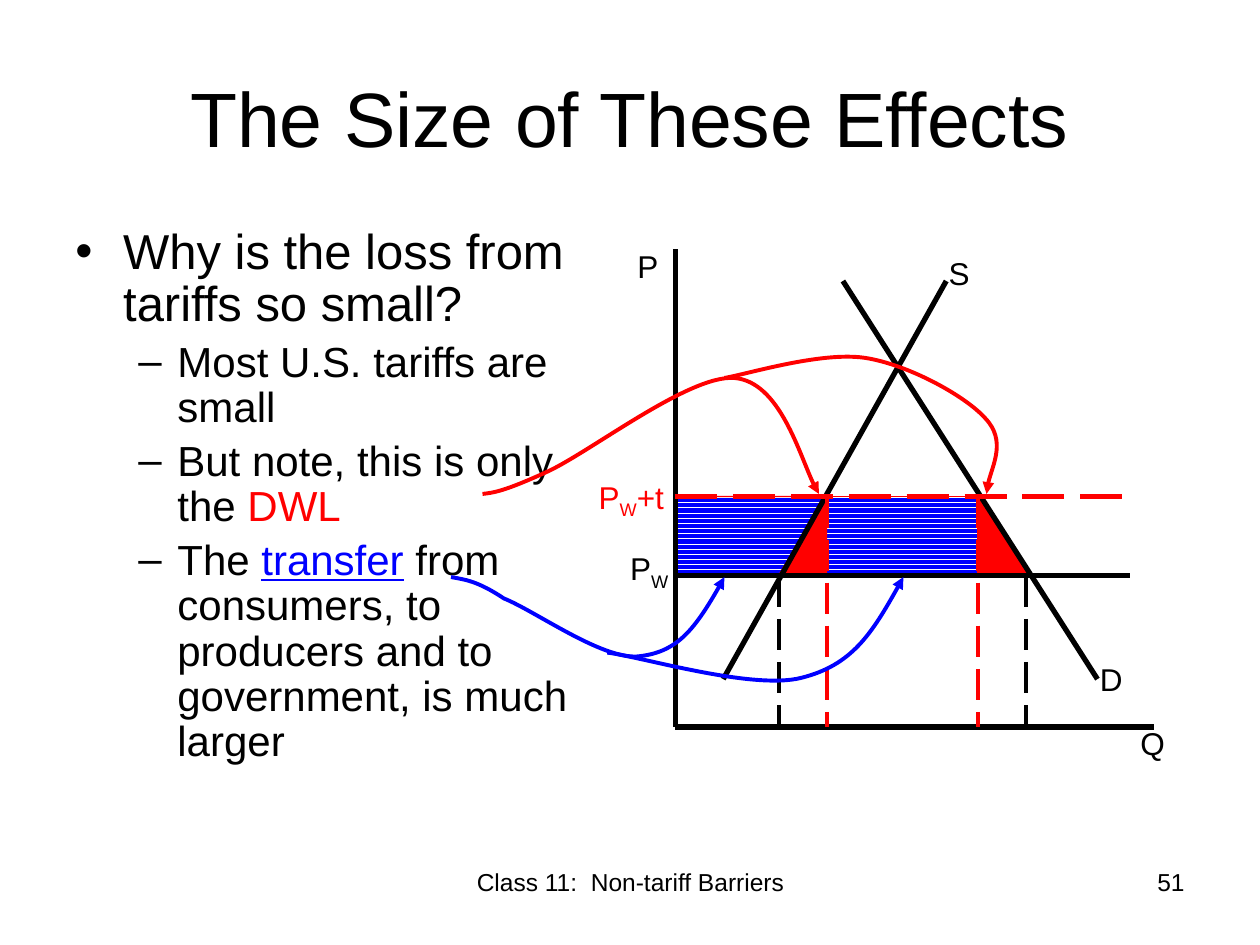
from pptx import Presentation
from pptx.dml.color import RGBColor
from pptx.enum.dml import MSO_LINE, MSO_PATTERN
from pptx.enum.shapes import MSO_CONNECTOR
from pptx.enum.text import MSO_ANCHOR, PP_ALIGN
from pptx.oxml.ns import qn
from pptx.util import Inches, Pt
from lxml.etree import SubElement

COLORS = {"black": "000000", "red": "FF0000", "blue": "0000FF", "white": "FFFFFF"}
FONT = "Arial"


def color(name):
    """Return the named colour."""
    return RGBColor.from_string(COLORS[name])


class Page:
    """Holds the style and the current slide."""

    def __init__(self, deck):
        self.slide = deck.slides.add_slide(deck.slide_layouts[5])
        self.shapes = self.slide.shapes

    def span(self, para, text, size, ink="black", underline=None, subscript=False):
        """Add one run to a paragraph."""
        span = para.add_run()
        span.text = text
        span.font.name = FONT
        span.font.size = Pt(size)
        span.font.color.rgb = color(ink)
        span.font.underline = underline
        if subscript:
            span._r.get_or_add_rPr().set("baseline", "-25000")

    def title(self, text, left, top, width, height):
        """Place and fill the title placeholder."""
        box = self.shapes.title
        box.left, box.top = Inches(left), Inches(top)
        box.width, box.height = Inches(width), Inches(height)
        box.text_frame.vertical_anchor = MSO_ANCHOR.MIDDLE
        para = box.text_frame.paragraphs[0]
        para.alignment = PP_ALIGN.CENTER
        self.span(para, text, 44)

    def frame(self, left, top, width, height):
        """Add a wrapping text box and return its frame."""
        box = self.shapes.add_textbox(
            Inches(left), Inches(top), Inches(width), Inches(height))
        box.text_frame.word_wrap = True
        return box.text_frame

    def footer(self, text, left, width, alignment):
        """Add a text at the foot of the slide."""
        para = self.frame(left, 6.83, width, 0.52).paragraphs[0]
        para.alignment = alignment
        self.span(para, text, 14)

    def label(self, left, top, width, *parts):
        """Add a diagram label made of (text, style) parts."""
        frame = self.frame(left, top, width, 0.36)
        frame.margin_left = frame.margin_right = Inches(0.08)
        frame.margin_top = frame.margin_bottom = Inches(0.04)
        for text, style in parts:
            self.span(frame.paragraphs[0], text, 18, **style)

    def bullets(self, items, left, top, width, height):
        """Add a two-level bullet list."""
        levels = [(28, "•", 0.38, -0.38), (24, "–", 0.81, -0.31)]
        frame = self.frame(left, top, width, height)
        for number, (level, parts) in enumerate(items):
            para = frame.add_paragraph() if number else frame.paragraphs[0]
            size, mark, margin, indent = levels[level]
            para.level = level
            para.line_spacing = 0.9
            para.space_before = Pt(size * 0.2)
            properties = para._p.get_or_add_pPr()
            properties.set("marL", str(Inches(margin)))
            properties.set("indent", str(Inches(indent)))
            SubElement(properties, qn("a:buFont")).set("typeface", FONT)
            SubElement(properties, qn("a:buChar")).set("char", mark)
            for text, style in parts:
                self.span(para, text, size, **style)

    def line(self, start, end, ink="black", width=3, dashed=False):
        """Add a straight line."""
        line = self.shapes.add_connector(
            MSO_CONNECTOR.STRAIGHT, *(Inches(value) for value in start + end))
        line.line.color.rgb = color(ink)
        line.line.width = Pt(width)
        if dashed:
            line.line.dash_style = MSO_LINE.LONG_DASH
        SubElement(line._element.spPr, qn("a:effectLst"))

    def outline(self, points, ink, width, close):
        """Add a freeform through the points."""
        start, *rest = [(Inches(x), Inches(y)) for x, y in points]
        builder = self.shapes.build_freeform(*start)
        builder.add_line_segments(rest, close=close)
        shape = builder.convert_to_shape()
        shape.shadow.inherit = False
        shape.line.color.rgb = color(ink)
        shape.line.width = Pt(width)
        return shape

    def area(self, points, striped=False):
        """Add a closed area, solid red or striped blue."""
        fill = self.outline(points, "red", 0.75, True).fill
        if striped:
            fill.patterned()
            fill.pattern = MSO_PATTERN.DARK_HORIZONTAL
            fill.fore_color.rgb = color("blue")
            fill.back_color.rgb = color("white")
        else:
            fill.solid()
            fill.fore_color.rgb = color("red")

    def curved_arrow(self, points, ink):
        """Add a Bezier arrow: a start, then three points per segment."""
        shape = self.outline(points, ink, 2.25, False)
        shape.fill.background()
        steps = list(shape._element.iter(qn("a:lnTo")))
        route = steps[0].getparent()
        for first in range(0, len(steps), 3):
            curve = SubElement(route, qn("a:cubicBezTo"))
            for step in steps[first:first + 3]:
                curve.append(step[0])
                route.remove(step)
        SubElement(shape.line._get_or_add_ln(), qn("a:tailEnd")).set("type", "triangle")


def main():
    """Build the slide."""
    deck = Presentation()
    deck.slide_width, deck.slide_height = Inches(10), Inches(7.5)
    page = Page(deck)
    red, blue, plain = {"ink": "red"}, {"ink": "blue", "underline": True}, {}
    sub = {"subscript": True}

    page.footer("Class 11:  Non-tariff Barriers", 3.42, 3.17, PP_ALIGN.CENTER)
    page.footer("51", 7.17, 2.33, PP_ALIGN.RIGHT)
    page.title("The Size of These Effects", 0.5, 0.3, 9, 1.25)
    page.bullets([
        (0, [("Why is the loss from tariffs so small?", plain)]),
        (1, [("Most U.S. tariffs are small", plain)]),
        (1, [("But note, this is only the ", plain), ("DWL", red)]),
        (1, [("The ", plain), ("transfer", blue),
             (" from consumers, to producers and to government, is much larger", plain)]),
    ], 0.5, 1.75, 4.17, 4.95)

    axis, base, world, tariff = 5.36, 5.77, 4.57, 3.94
    supply, supply_tariff, demand_tariff, demand = 6.18, 6.56, 7.76, 8.14
    page.area([(demand_tariff, tariff), (demand_tariff, world), (8.18, world)])
    page.area([(supply_tariff, tariff), (supply_tariff, world),
               (demand_tariff, world), (demand_tariff, tariff)], striped=True)
    page.area([(axis, tariff), (axis, world), (supply, world),
               (supply_tariff, tariff)], striped=True)
    page.area([(supply_tariff, tariff), (supply_tariff, world), (supply, world)])

    for start, end in [((axis, 1.98), (axis, base)), ((axis, base), (9.16, base)),
                       ((7.51, 2.23), (5.74, 5.39)), ((6.69, 2.23), (8.71, 5.39)),
                       ((axis, world), (8.97, world))]:
        page.line(start, end)
    for x in (supply, demand):
        page.line((x, world), (x, base), width=2.25, dashed=True)
    page.line((axis, tariff), (8.97, tariff), "red", dashed=True)
    for x in (supply_tariff, demand_tariff):
        page.line((x, tariff), (x, base), "red", 2.25, True)

    for text, left, top in [("S", 7.45, 1.98), ("D", 8.65, 5.2),
                            ("P", 4.98, 1.92), ("Q", 8.97, 5.71)]:
        page.label(left, top, 0.44, (text, plain))
    page.label(4.92, 4.32, 0.51, ("P", plain), ("W", sub))
    page.label(4.67, 3.75, 0.82, ("P", red), ("W", red | sub), ("+t", red))

    page.curved_arrow([(3.83, 3.92), (3.92, 3.91), (4, 3.9), (4.33, 3.75), (4.67, 3.6),
                       (5.47, 2.97), (5.83, 3), (6.19, 3.03), (6.39, 3.76), (6.5, 3.92)], "red")
    page.curved_arrow([(5.75, 3), (5.93, 2.97), (6.51, 2.79), (6.86, 2.84), (7.2, 2.89),
                       (7.66, 3.14), (7.82, 3.32), (7.99, 3.5), (7.83, 3.79), (7.83, 3.92)], "red")
    page.curved_arrow([(3.58, 4.58), (3.69, 4.6), (3.79, 4.61), (4, 4.75), (4.25, 4.85),
                       (4.77, 5.23), (5.06, 5.21), (5.36, 5.18), (5.52, 5), (5.75, 4.58)], "blue")
    page.curved_arrow([(4.82, 5.18), (5.08, 5.21), (5.97, 5.48), (6.36, 5.38),
                       (6.76, 5.28), (6.94, 5), (7.17, 4.58)], "blue")
    deck.save("out.pptx")


if __name__ == "__main__":
    main()
